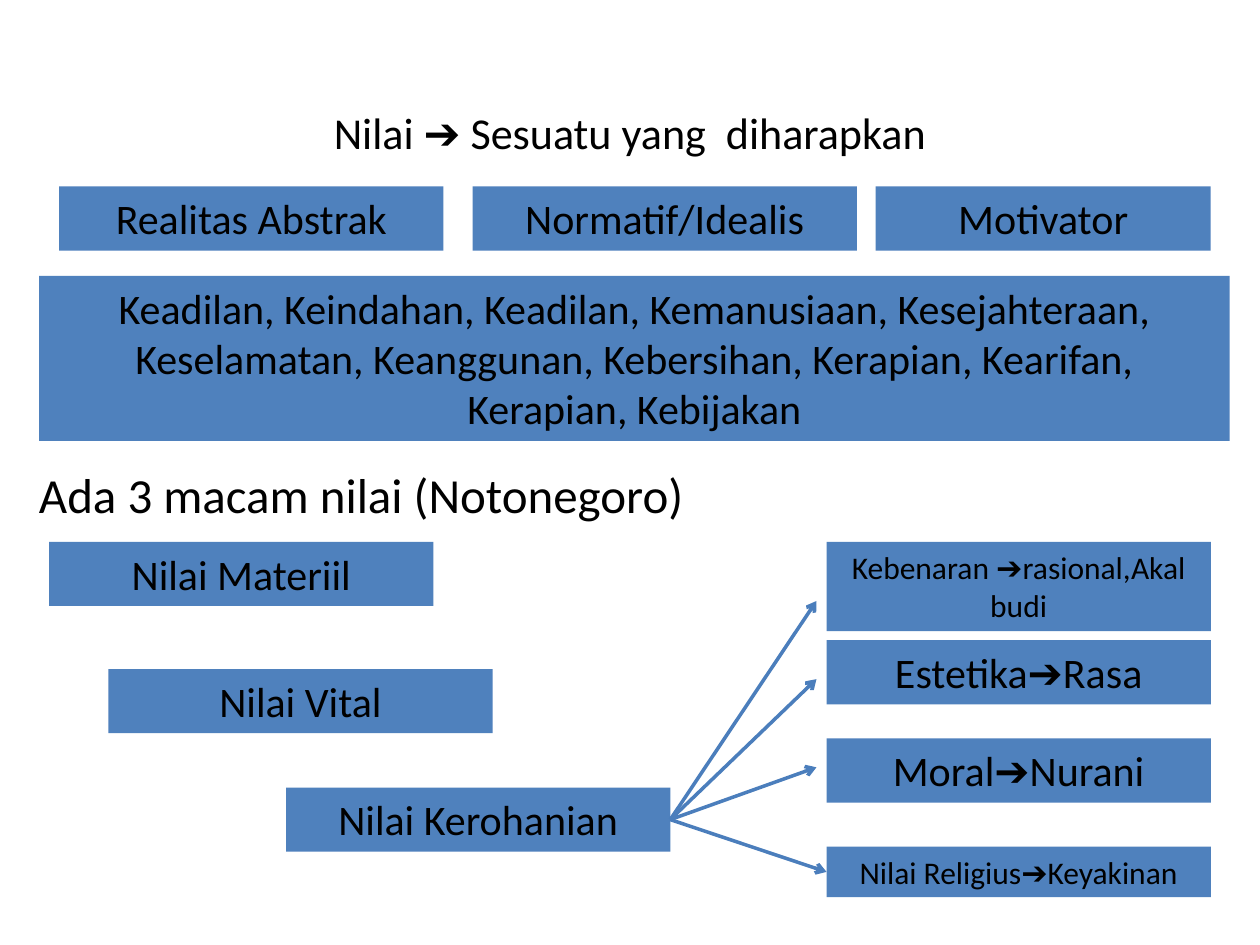
import pptx
import pptx.dml.color
import pptx.enum.shapes
import pptx.enum.text
import pptx.oxml.ns
import pptx.util
from lxml import etree

BLACK = pptx.dml.color.RGBColor(0x00, 0x00, 0x00)
BLUE = pptx.dml.color.RGBColor(0x4F, 0x81, 0xBD)
ARROW_BLUE = pptx.dml.color.RGBColor(0x4B, 0x7E, 0xBC)
FONT = "Calibri"

WIDTH = pptx.util.Inches(10)
HEIGHT = pptx.util.Inches(7.5)
COLUMN = WIDTH / 100
ROW = HEIGHT / 75

BOX_WIDTH = 30.5
BOX_HEIGHT = 5.1
TRAITS_TOP = 14.8
KINDS_TOP = 43
ASPECTS_LEFT = 65.6
ARROW_GAP = 0.8

CENTER = pptx.enum.text.PP_ALIGN.CENTER
LEFT = pptx.enum.text.PP_ALIGN.LEFT


def across(columns):
    return round(columns * COLUMN)


def down(rows):
    return round(rows * ROW)


def write(shape, text, size, alignment, anchor):
    frame = shape.text_frame
    frame.word_wrap = True
    frame.vertical_anchor = anchor
    paragraph = frame.paragraphs[0]
    paragraph.text = text
    paragraph.alignment = alignment
    paragraph.font.name = FONT
    paragraph.font.size = pptx.util.Pt(size)
    paragraph.font.color.rgb = BLACK


def add_heading(slide, text, left, top, size, alignment, anchor):
    shape = slide.shapes.add_textbox(across(left), down(top), across(90), down(5.6))
    write(shape, text, size, alignment, anchor)
    return shape


def add_box(slide, text, left, top, width=BOX_WIDTH, height=BOX_HEIGHT, size=24):
    shape = slide.shapes.add_shape(
        pptx.enum.shapes.MSO_SHAPE.RECTANGLE,
        across(left), down(top), across(width), down(height))
    shape.shadow.inherit = False
    shape.fill.solid()
    shape.fill.fore_color.rgb = BLUE
    shape.line.fill.background()
    write(shape, text, size, CENTER, pptx.enum.text.MSO_ANCHOR.TOP)
    shape.text_frame.auto_size = pptx.enum.text.MSO_AUTO_SIZE.SHAPE_TO_FIT_TEXT
    return shape


def add_arrow(slide, source, end_left, end_top):
    connector = slide.shapes.add_connector(
        pptx.enum.shapes.MSO_CONNECTOR.STRAIGHT,
        source.left + source.width, source.top + source.height // 2,
        across(end_left), down(end_top))
    connector.begin_connect(source, 3)
    connector.line.color.rgb = ARROW_BLUE
    connector.line.width = pptx.util.Pt(2)
    name = pptx.oxml.ns.qn
    etree.SubElement(connector.line._get_or_add_ln(), name("a:tailEnd"), type="arrow")
    etree.SubElement(connector._element.spPr, name("a:effectLst"))
    return connector


def main():
    presentation = pptx.Presentation()
    presentation.slide_width = WIDTH
    presentation.slide_height = HEIGHT
    slide = presentation.slides.add_slide(presentation.slide_layouts[6])

    add_heading(slide, "Nilai ➔ Sesuatu yang  diharapkan", 5, 7.7, 25.2,
                CENTER, pptx.enum.text.MSO_ANCHOR.MIDDLE)

    for text, left, width in (
        ("Realitas Abstrak", 4.7, BOX_WIDTH),
        ("Normatif/Idealis", 37.5, BOX_WIDTH),
        ("Motivator", 69.5, 26.6),
    ):
        add_box(slide, text, left, TRAITS_TOP, width)

    add_box(slide, "Keadilan, Keindahan, Keadilan, Kemanusiaan, Kesejahteraan, "
            "Keselamatan, Keanggunan, Kebersihan, Kerapian, Kearifan, "
            "Kerapian, Kebijakan", 3.1, 21.9, 94.5, 13.1)

    subheading = add_heading(slide, "Ada 3 macam nilai (Notonegoro)", 3.1, 35.9, 28,
                             LEFT, pptx.enum.text.MSO_ANCHOR.BOTTOM)
    frame = subheading.text_frame
    frame.margin_left = frame.margin_right = frame.margin_bottom = 0

    add_box(slide, "Nilai Materiil", 3.9, KINDS_TOP)
    add_box(slide, "Nilai Vital", 8.6, 53.1)
    spiritual = add_box(slide, "Nilai Kerohanian", 22.7, 62.5)

    for text, top, height, size, arrow_end in (
        ("Kebenaran ➔rasional,Akal budi", KINDS_TOP, 7.1, 18, 47.7),
        ("Estetika➔Rasa", 50.8, BOX_HEIGHT, 24, 53.9),
        ("Moral➔Nurani", 58.6, BOX_HEIGHT, 24, 60.9),
    ):
        add_box(slide, text, ASPECTS_LEFT, top, height=height, size=size)
        add_arrow(slide, spiritual, ASPECTS_LEFT - ARROW_GAP, arrow_end)

    religion = add_box(slide, "Nilai Religius➔Keyakinan", ASPECTS_LEFT, 67.2,
                       height=4, size=18)
    add_arrow(slide, spiritual, ASPECTS_LEFT, 69.2).end_connect(religion, 1)

    presentation.save("out.pptx")


if __name__ == "__main__":
    main()
